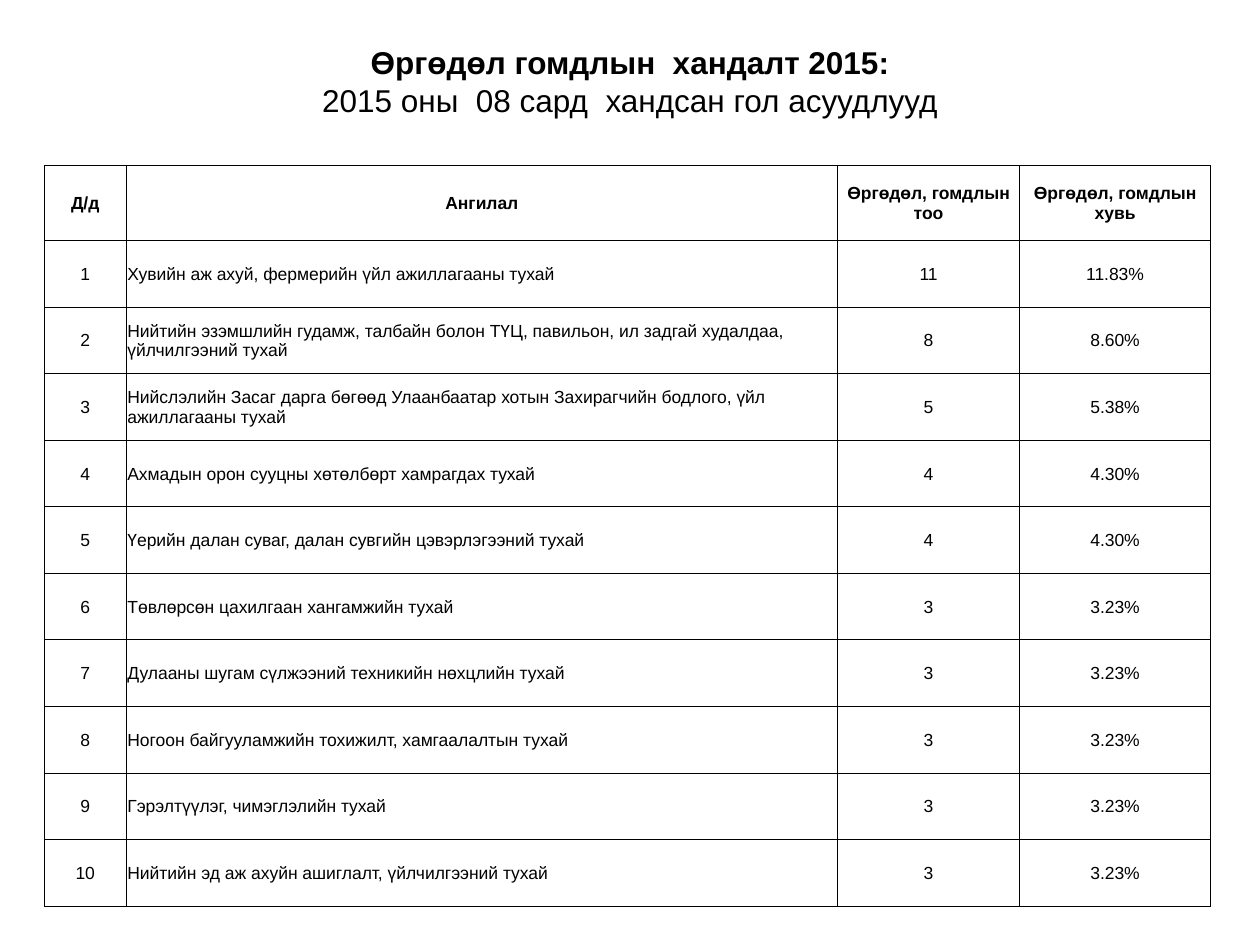
"""Build a slide that tabulates the petitions and complaints of August 2015."""
from lxml import etree
from pptx import Presentation
from pptx.dml.color import RGBColor
from pptx.enum.text import MSO_ANCHOR, PP_ALIGN
from pptx.oxml.ns import qn
from pptx.util import Pt

CENTER, LEFT = PP_ALIGN.CENTER, PP_ALIGN.LEFT
MIDDLE = MSO_ANCHOR.MIDDLE
FONT = "Arial"
COLORS = {"ink": "000000", "paper": "FFFFFF"}

COLUMN_WIDTHS = (46.8, 406.5, 104, 109.2)
HEADER_HEIGHT, ROW_HEIGHT = 42.9, 38.06
HEADINGS = ("Д/д", "Ангилал", "Өргөдөл, гомдлын тоо", "Өргөдөл, гомдлын хувь")
COMPLAINTS = (
    ("Хувийн аж ахуй, фермерийн үйл ажиллагааны тухай", "11", "11.83%"),
    ("Нийтийн эзэмшлийн гудамж, талбайн болон ТҮЦ, павильон, ил задгай худалдаа, "
     "үйлчилгээний тухай", "8", "8.60%"),
    ("Нийслэлийн Засаг дарга бөгөөд Улаанбаатар хотын Захирагчийн бодлого, үйл "
     "ажиллагааны тухай", "5", "5.38%"),
    ("Ахмадын орон сууцны хөтөлбөрт хамрагдах тухай", "4", "4.30%"),
    ("Үерийн далан суваг, далан сувгийн цэвэрлэгээний тухай", "4", "4.30%"),
    ("Төвлөрсөн цахилгаан хангамжийн тухай", "3", "3.23%"),
    ("Дулааны шугам сүлжээний техникийн нөхцлийн тухай", "3", "3.23%"),
    ("Ногоон байгууламжийн тохижилт, хамгаалалтын тухай", "3", "3.23%"),
    ("Гэрэлтүүлэг, чимэглэлийн тухай", "3", "3.23%"),
    ("Нийтийн эд аж ахуйн ашиглалт, үйлчилгээний тухай", "3", "3.23%"),
)


def write(paragraph, text, size=10, bold=False, align=CENTER, color="ink"):
    """Add formatted text to a paragraph."""
    paragraph.alignment = align
    run = paragraph.add_run()
    run.text = text
    run.font.name = FONT
    run.font.size = Pt(size)
    run.font.bold = bold
    run.font.color.rgb = RGBColor.from_string(COLORS[color])


def add_title(slide):
    """Add the two-line title, bold above regular."""
    frame = slide.shapes.add_textbox(Pt(49.7), Pt(20.9), Pt(620.6), Pt(50.4)).text_frame
    frame.word_wrap = True
    frame.vertical_anchor = MIDDLE
    write(frame.paragraphs[0], "Өргөдөл гомдлын  хандалт 2015:", size=18, bold=True)
    write(frame.add_paragraph(), "2015 оны  08 сард  хандсан гол асуудлууд", size=18)


def add_borders(cell, width=0.5):
    """Draw a thin line on all four sides of a cell."""
    properties = cell._tc.get_or_add_tcPr()
    for position, side in enumerate(("a:lnL", "a:lnR", "a:lnT", "a:lnB")):
        line = etree.Element(qn(side), w=str(Pt(width)))
        fill = etree.SubElement(line, qn("a:solidFill"))
        etree.SubElement(fill, qn("a:srgbClr"), val=COLORS["ink"])
        properties.insert(position, line)


def fill_cell(cell, text, **text_format):
    """Give a cell its text, margins, fill and borders."""
    cell.margin_left = cell.margin_right = cell.margin_top = Pt(0.7)
    cell.margin_bottom = Pt(0)
    cell.vertical_anchor = MIDDLE
    cell.fill.solid()
    cell.fill.fore_color.rgb = RGBColor.from_string(COLORS["paper"])
    add_borders(cell)
    write(cell.text_frame.paragraphs[0], text, **text_format)


def add_complaint_table(slide):
    """Add the table of numbered complaint topics with counts and shares."""
    records = [HEADINGS]
    records += [(str(number), *record) for number, record in enumerate(COMPLAINTS, 1)]
    height = HEADER_HEIGHT + ROW_HEIGHT * len(COMPLAINTS)
    table = slide.shapes.add_table(
        len(records), len(HEADINGS), Pt(25.3), Pt(94.5), Pt(sum(COLUMN_WIDTHS)), Pt(height)
    ).table
    for column, width in zip(table.columns, COLUMN_WIDTHS):
        column.width = Pt(width)
    for row_index, record in enumerate(records):
        is_header = row_index == 0
        table.rows[row_index].height = Pt(HEADER_HEIGHT if is_header else ROW_HEIGHT)
        for column_index, text in enumerate(record):
            is_topic = column_index == 1 and not is_header
            fill_cell(table.cell(row_index, column_index), text,
                      bold=is_header, align=LEFT if is_topic else CENTER)


def main():
    """Build and save the slide."""
    presentation = Presentation()
    presentation.slide_width, presentation.slide_height = Pt(720), Pt(540)
    slide = presentation.slides.add_slide(presentation.slide_layouts[6])
    add_title(slide)
    add_complaint_table(slide)
    presentation.save("out.pptx")


if __name__ == "__main__":
    main()
